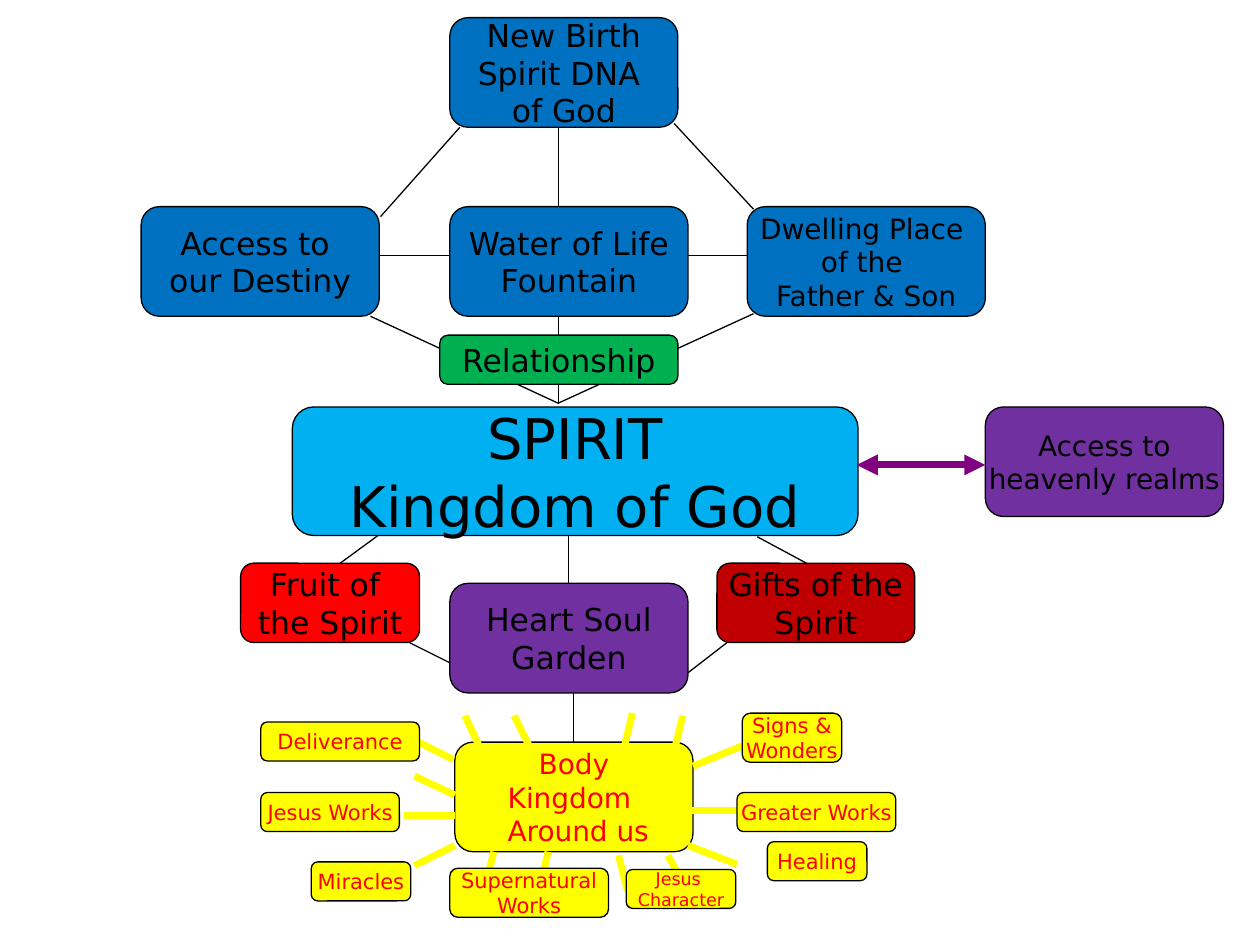
from pptx import Presentation
from pptx.dml.color import RGBColor
from pptx.enum.shapes import MSO_CONNECTOR, MSO_SHAPE
from pptx.enum.text import MSO_ANCHOR, PP_ALIGN
from pptx.oxml.ns import qn
from pptx.util import Inches, Pt
from lxml import etree

BLACK = RGBColor(0x00, 0x00, 0x00)
BLUE = RGBColor(0x00, 0x70, 0xC0)
SKY = RGBColor(0x00, 0xB0, 0xF0)
GREEN = RGBColor(0x00, 0xB0, 0x50)
PURPLE = RGBColor(0x70, 0x30, 0xA0)
PLUM = RGBColor(0x80, 0x00, 0x80)
RED = RGBColor(0xFF, 0x00, 0x00)
DARK_RED = RGBColor(0xC0, 0x00, 0x00)
YELLOW = RGBColor(0xFF, 0xFF, 0x00)

prs = Presentation()
prs.slide_width, prs.slide_height = Inches(10), Inches(7.5)
s = prs.slides.add_slide(prs.slide_layouts[6])


def add_box(text, x, y, w, h, size, fill, color=BLACK):
    sp = s.shapes.add_shape(MSO_SHAPE.FLOWCHART_ALTERNATE_PROCESS,
                            Inches(x), Inches(y), Inches(w), Inches(h))
    sp.shadow.inherit = False
    sp.fill.solid()
    sp.fill.fore_color.rgb = fill
    sp.line.color.rgb = BLACK
    sp.line.width = Pt(0.75)
    tf = sp.text_frame
    frame = {"word_wrap": False, "vertical_anchor": MSO_ANCHOR.MIDDLE,
             "margin_left": 0, "margin_right": 0, "margin_top": 0, "margin_bottom": 0}
    for name, value in frame.items():
        setattr(tf, name, value)
    p = tf.paragraphs[0]
    p.text = text.replace("\n", "\v")
    p.alignment = PP_ALIGN.CENTER
    for name, value in {"name": "DejaVu Sans", "size": Pt(size)}.items():
        for r in p.runs:
            setattr(r.font, name, value)
    for r in p.runs:
        r.font.color.rgb = color


def add_line(x1, y1, x2, y2, color=BLACK, width=0.75):
    line = s.shapes.add_connector(MSO_CONNECTOR.STRAIGHT,
                                  Inches(x1), Inches(y1), Inches(x2), Inches(y2))
    line.line.color.rgb = color
    line.line.width = Pt(width)
    etree.SubElement(line._element.spPr, qn("a:effectLst"))
    return line


# Thin links, behind the boxes
links = [
    (4.43, 1.01, 4.43, 1.64), (3.65, 1.01, 3.02, 1.72), (5.35, 0.98, 5.98, 1.66),
    (3.57, 2.03, 3.02, 2.03), (5.46, 2.03, 5.93, 2.03),
    (4.43, 2.51, 4.43, 3.21), (2.94, 2.51, 4.43, 3.2), (5.98, 2.49, 4.43, 3.2),
    (3, 4.25, 2.7, 4.47), (4.51, 4.24, 4.51, 4.63), (6.01, 4.26, 6.4, 4.47),
    (3.25, 5.1, 3.57, 5.26), (5.77, 5.1, 5.46, 5.34), (4.55, 5.5, 4.55, 5.97),
]
for link in links:
    add_line(*link)

# Main boxes
W, H = 1.89, 0.87
boxes = [
    ("New Birth\nSpirit DNA \nof God", 3.57, 0.14, 1.81, H, 18, BLUE),
    ("Access to \nour Destiny", 1.12, 1.64, W, H, 18, BLUE),
    ("Water of Life\nFountain", 3.57, 1.64, W, H, 18, BLUE),
    ("Dwelling Place \nof the \nFather & Son", 5.93, 1.64, W, H, 16, BLUE),
    ("Relationship", 3.49, 2.66, W, 0.39, 18, GREEN),
    ("SPIRIT\nKingdom of God", 2.32, 3.23, 4.49, 1.02, 32, SKY),
    ("Access to\nheavenly realms", 7.82, 3.23, W, H, 16, PURPLE),
    ("Fruit of \nthe Spirit", 1.91, 4.47, 1.42, 0.63, 18, RED),
    ("Heart Soul\nGarden", 3.57, 4.63, W, H, 18, PURPLE),
    ("Gifts of the\nSpirit", 5.69, 4.47, 1.57, 0.63, 18, DARK_RED),
    ("Body\nKingdom \n Around us", 3.61, 5.89, W, H, 16, YELLOW, RED),
]
for box in boxes:
    add_box(*box)

# Two-way arrow to the heavenly realms
arrow = add_line(6.8, 3.69, 7.82, 3.69, PLUM, 4)
ln = arrow.line._get_or_add_ln()
for end in ("a:headEnd", "a:tailEnd"):
    etree.SubElement(ln, qn(end), type="triangle")

# Rays around the body
rays = [
    (3.6, 6.03, 3.28, 5.87), (3.61, 6.31, 3.29, 6.16),
    (3.61, 6.47, 3.21, 6.47), (3.61, 6.71, 3.29, 6.87),
    (5.89, 5.92, 5.5, 6.08), (5.85, 6.43, 5.45, 6.43), (5.85, 6.86, 5.46, 6.71),
    (3.84, 6, 3.69, 5.68), (4.24, 6, 4.08, 5.68),
    (4.94, 5.99, 5.02, 5.66), (5.34, 6, 5.42, 5.68),
    (3.84, 7.07, 3.92, 6.76), (4.28, 7.07, 4.35, 6.76),
    (4.98, 7.07, 4.91, 6.79), (5.46, 7.07, 5.3, 6.79),
]
for ray in rays:
    add_line(*ray, YELLOW, 4)

# Outward signs
signs = [
    ("Deliverance", 2.07, 5.73, 1.26, 0.31, 12),
    ("Jesus Works", 2.07, 6.29, 1.1, 0.31, 12),
    ("Miracles", 2.47, 6.84, 0.79, 0.31, 12),
    ("Supernatural\nWorks", 3.57, 6.89, 1.26, 0.39, 12),
    ("Jesus \nCharacter", 4.97, 6.9, 0.87, 0.31, 10),
    ("Healing", 6.09, 6.68, 0.79, 0.31, 12),
    ("Greater Works", 5.85, 6.29, 1.26, 0.31, 12),
    ("Signs &\nWonders", 5.89, 5.66, 0.79, 0.39, 12),
]
for sign in signs:
    add_box(*sign, YELLOW, RED)

prs.save("out.pptx")
